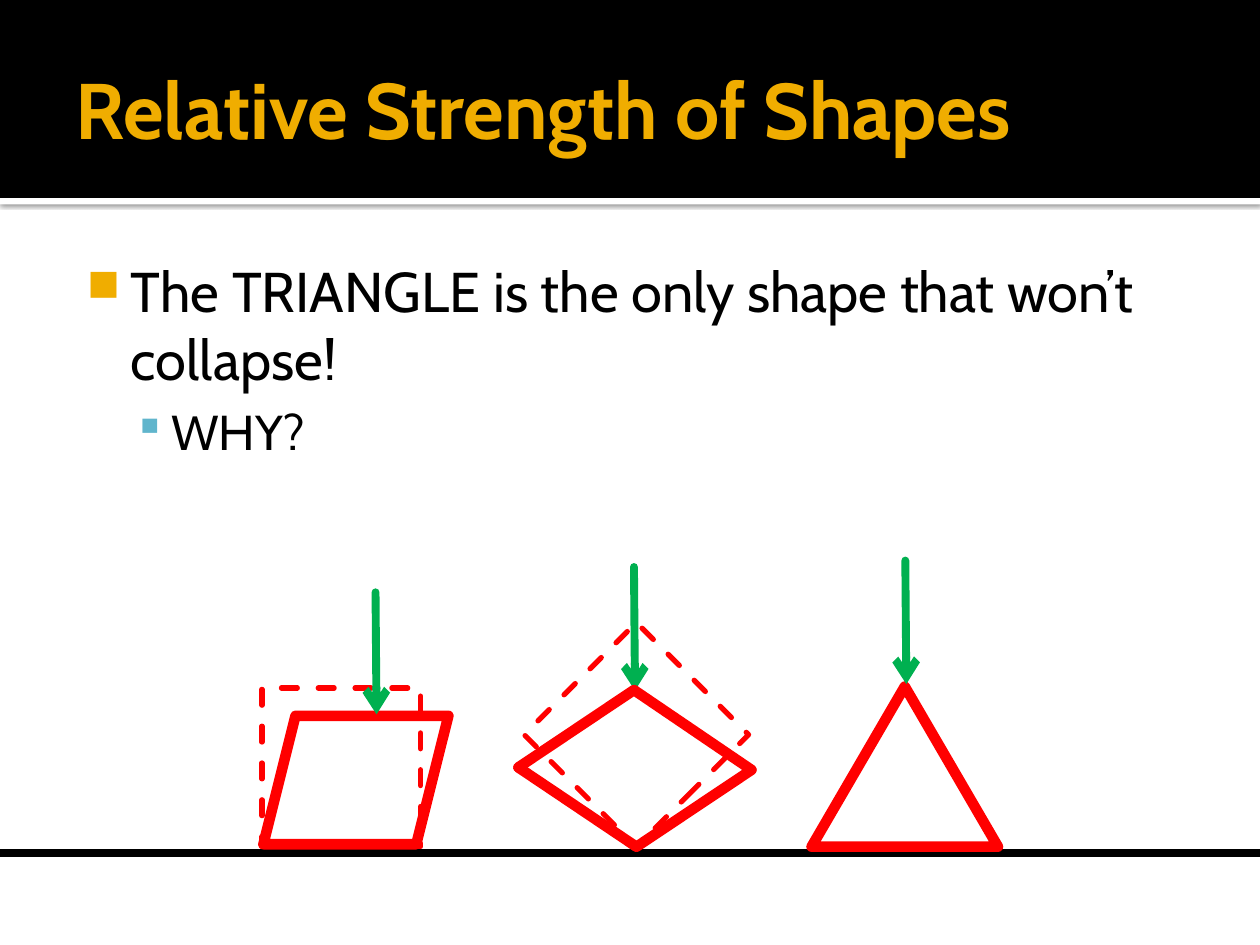
"""Build the slide on the relative strength of shapes."""
from lxml.etree import SubElement
from pptx import Presentation
from pptx.dml.color import RGBColor
from pptx.enum.dml import MSO_LINE as DASH
from pptx.enum.shapes import MSO_CONNECTOR as CONN, MSO_SHAPE as SHAPE
from pptx.enum.text import MSO_ANCHOR as ANCHOR
from pptx.oxml import parse_xml
from pptx.oxml.ns import nsdecls, qn
from pptx.util import Cm, Pt

BLACK = RGBColor(0x00, 0x00, 0x00)
WHITE = RGBColor(0xFF, 0xFF, 0xFF)
GOLD = RGBColor(0xF0, 0xAD, 0x00)
BLUE = RGBColor(0x60, 0xB5, 0xCC)
RED = RGBColor(0xFF, 0x00, 0x00)
GREEN = RGBColor(0x00, 0xB0, 0x50)

prs = Presentation()
prs.slide_width, prs.slide_height = Cm(25.4), Cm(19.05)
s = prs.slides.add_slide(prs.slide_layouts[6])


def write(p, text, size, color=BLACK, bold=False, bullet=None, bullet_color=GOLD,
          bullet_size=80, left=0, hang=0, before=0):
    r = p.add_run()
    r.text = text
    r.font.name, r.font.size, r.font.bold = "Cabin", Pt(size), bold
    r.font.color.rgb = color
    p.space_before = Pt(before)
    if bullet:
        pPr = p._p.get_or_add_pPr()
        pPr.set("marL", str(Cm(left)))
        pPr.set("indent", str(-Cm(hang)))
        clr = SubElement(pPr, qn("a:buClr"))
        SubElement(clr, qn("a:srgbClr"), val=str(bullet_color))
        SubElement(pPr, qn("a:buSzPct"), val=str(bullet_size * 1000))
        SubElement(pPr, qn("a:buChar"), char=bullet)


def stroke(sp, color, width, dash=None, arrow=False, cap="rnd"):
    sp.line.color.rgb, sp.line.width = color, Pt(width)
    if dash:
        sp.line.dash_style = dash
    ln = sp.line._get_or_add_ln()
    ln.set("cap", cap)
    SubElement(ln, qn("a:round"))
    if arrow:
        SubElement(ln, qn("a:tailEnd"), type="arrow")
    if sp._element.spPr.find(qn("a:effectLst")) is None:
        SubElement(sp._element.spPr, qn("a:effectLst"))


for color, top, height in [(WHITE, 3.99, 0.13), (BLACK, 0, 3.99)]:
    sp = s.shapes.add_shape(SHAPE.RECTANGLE, 0, Cm(top), prs.slide_width, Cm(height))
    sp.fill.solid()
    sp.fill.fore_color.rgb = color
    sp.line.fill.background()
    sp.shadow.inherit = False
    if color == WHITE:
        sp._element.spPr.find(qn("a:effectLst")).append(parse_xml(
            f'<a:outerShdw {nsdecls("a")} blurRad="{Pt(2.5)}" dist="{Pt(0.8)}" dir="5400000">'
            '<a:srgbClr val="000000"><a:alpha val="60000"/></a:srgbClr></a:outerShdw>'))

tf = s.shapes.add_textbox(Cm(1.27), Cm(0.43), Cm(22.86), Cm(3.48)).text_frame
tf.word_wrap, tf.vertical_anchor = True, ANCHOR.MIDDLE
tf.margin_left, tf.margin_right = Cm(0.25), Cm(0.13)
write(tf.paragraphs[0], "Relative Strength of Shapes", 45, color=GOLD, bold=True)

tf = s.shapes.add_textbox(Cm(1.27), Cm(4.93), Cm(22.86), Cm(5.99)).text_frame
tf.word_wrap = True
tf.margin_left, tf.margin_top = Cm(0.15), Cm(0.25)
write(tf.paragraphs[0], "The TRIANGLE is the only shape that won’t collapse!", 32,
      bullet="■", left=1.22, hang=0.89)
p = tf.add_paragraph()
p.level = 1
write(p, "WHY?", 28, bullet="▪", bullet_color=BLUE, bullet_size=90,
      left=2.03, hang=0.76, before=5.6)

ground = s.shapes.add_connector(CONN.STRAIGHT, 0, Cm(17.2), prs.slide_width, Cm(17.2))
stroke(ground, BLACK, 4.5, cap="flat")

for kind, x, y, w, h, angle, width, dash in [
    (SHAPE.ISOSCELES_TRIANGLE, 16.36, 13.84, 3.76, 3.23, 0, 6, None),
    (SHAPE.RECTANGLE, 5.28, 13.87, 3.2, 3.2, 0, 3, DASH.DASH),
    (SHAPE.RECTANGLE, 11.23, 13.21, 3.2, 3.2, 315, 3, DASH.DASH),
    (SHAPE.PARALLELOGRAM, 5.31, 14.43, 3.73, 2.59, 0, 6, None),
]:
    sp = s.shapes.add_shape(kind, Cm(x), Cm(y), Cm(w), Cm(h))
    sp.rotation = angle
    sp.fill.background()
    stroke(sp, RED, width, dash=dash)

for x1, y1, x2, y2 in [(7.57, 11.94, 7.59, 14.4), (12.78, 11.43, 12.8, 13.92),
                       (18.25, 11.3, 18.27, 13.79)]:
    arrow = s.shapes.add_connector(CONN.STRAIGHT, Cm(x1), Cm(y1), Cm(x2), Cm(y2))
    stroke(arrow, GREEN, 4.5, arrow=True)

corners = [(12.78, 13.91), (15.15, 15.52), (12.83, 17.07), (10.45, 15.47)]
for (x1, y1), (x2, y2) in zip(corners, corners[1:] + corners[:1]):
    side = s.shapes.add_connector(CONN.STRAIGHT, Cm(x1), Cm(y1), Cm(x2), Cm(y2))
    stroke(side, RED, 6)

prs.save("out.pptx")
